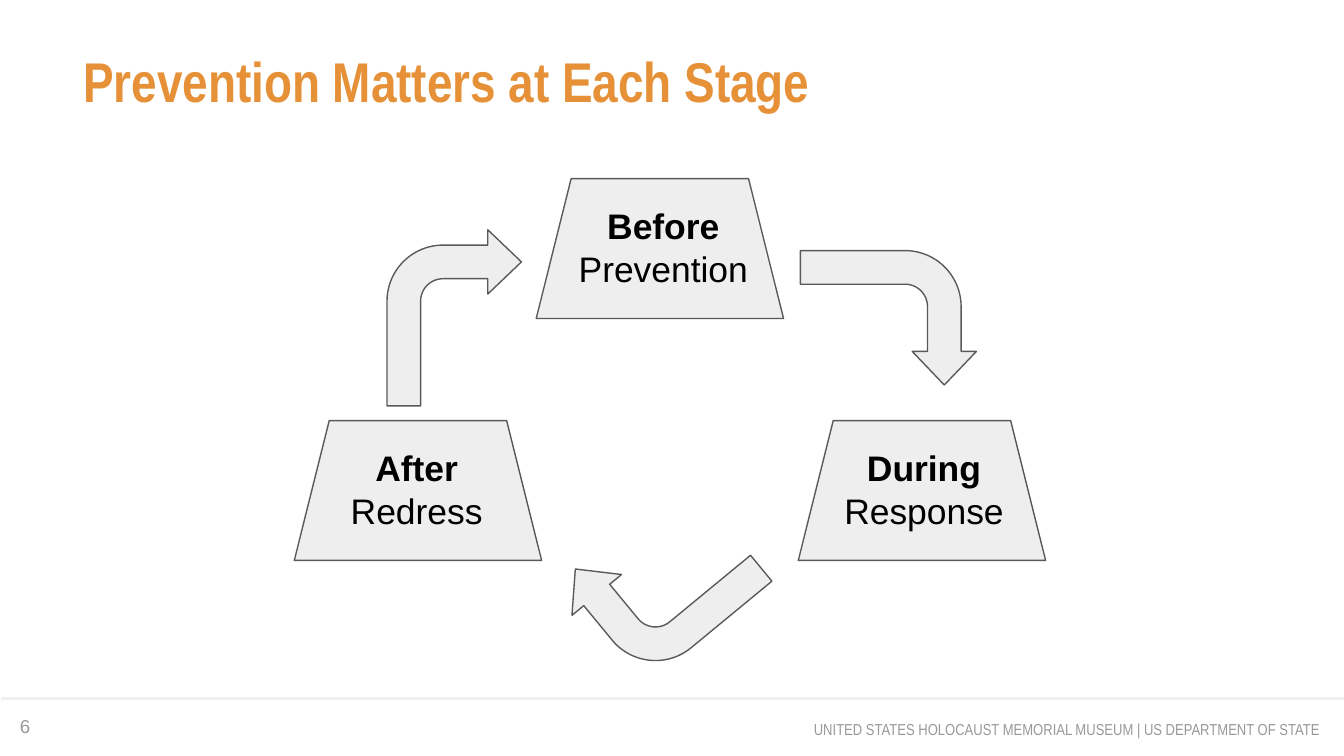
from pptx import Presentation
from pptx.dml.color import RGBColor as RGB
from pptx.enum.shapes import MSO_CONNECTOR as LINK, MSO_SHAPE as SHAPE
from pptx.enum.text import MSO_ANCHOR as ANCHOR, MSO_AUTO_SIZE as FIT, PP_ALIGN as ALIGN
from pptx.oxml.ns import qn
from pptx.util import Inches, Pt
from lxml.etree import SubElement

# Grid: square cells, 100 columns by 56.25 rows
CELL = Inches(0.1)
COLS, ROWS = 100, 56.25

ORANGE = RGB(0xE6, 0x91, 0x38)
BLACK = RGB(0, 0, 0)
GREY = RGB(0x99, 0x99, 0x99)
DARK = RGB(0x59, 0x59, 0x59)
PALE = RGB(0xEE, 0xEE, 0xEE)
RULE = RGB(0xEF, 0xEF, 0xEF)
SANS, SLIM = "Arial", "Arial Narrow"

# Stage: left, top, bold word, plain word, label offset, label width
STAGES = [
    (39.9, 13.3, "Before", "Prevention", 1.5, 15.9),
    (21.9, 31.3, "After", "Redress", 1.8, 14.6),
    (59.4, 31.3, "During", "Response", 2.3, 14.1),
]
# Arrow: left, top, turn in degrees
ARROWS = [(61.1, 17.1, 90), (28.8, 17.1, 0), (44.2, 37, 230.5)]
BEND = (0.25, 0.239, 0.25, 0.417)


def grid(*cells):
    return [round(n * CELL) for n in cells]


def add_text(slide, box, lines, size, font, color, align=ALIGN.LEFT,
             anchor=ANCHOR.TOP, pad=1, after=0, fit=FIT.NONE):
    """Add a text box; each line is a pair of words and boldness."""
    frame = slide.shapes.add_textbox(*grid(*box)).text_frame
    frame.word_wrap = True
    frame.auto_size = fit
    frame.vertical_anchor = anchor
    frame.margin_left = frame.margin_right = round(pad * CELL)
    frame.margin_top = frame.margin_bottom = round(pad * CELL)
    for i, (words, bold) in enumerate(lines):
        para = frame.paragraphs[0] if i == 0 else frame.add_paragraph()
        para.alignment = align
        para.space_after = Pt(after)
        run = para.add_run()
        run.text = words
        run.font.size = Pt(size)
        run.font.name = font
        run.font.bold = bold
        run.font.color.rgb = color


def add_form(slide, kind, box, adjust, turn=0):
    form = slide.shapes.add_shape(kind, *grid(*box))
    form.shadow.inherit = False
    form.fill.solid()
    form.fill.fore_color.rgb = PALE
    form.line.color.rgb = DARK
    form.line.width = Pt(0.75)
    form.rotation = turn
    for i, value in enumerate(adjust):
        form.adjustments[i] = value


def add_stage(slide, left, top, head, word, shift, width):
    add_form(slide, SHAPE.TRAPEZOID, (left, top, 18.4, 10.4), [0.25])
    add_text(slide, (left + shift, top + 0.9, width, 8.4),
             [(head, True), (word, False)], 19, SANS, BLACK,
             ALIGN.CENTER, fit=FIT.SHAPE_TO_FIT_TEXT)


def add_rule(slide, row):
    rule = slide.shapes.add_connector(LINK.STRAIGHT, *grid(0.1, row, COLS, row))
    rule.line.color.rgb = RULE
    rule.line.width = Pt(1.5)
    SubElement(rule._element.spPr, qn("a:effectLst"))


def main():
    deck = Presentation()
    deck.slide_width, deck.slide_height = grid(COLS, ROWS)
    slide = deck.slides.add_slide(deck.slide_layouts[6])

    # Footer
    add_rule(slide, 52)
    add_text(slide, (51.8, 52.1, 47.4, 4.3),
             [("UNITED STATES HOLOCAUST MEMORIAL MUSEUM | US DEPARTMENT OF STATE", False)],
             8.5, SLIM, GREY, ALIGN.RIGHT, ANCHOR.MIDDLE)
    add_text(slide, (0.5, 51.6, 7.8, 4.3), [("6", False)],
             10, SANS, GREY, anchor=ANCHOR.BOTTOM)

    # Title
    add_text(slide, (6.2, 3.5, 87.5, 5.4),
             [("Prevention Matters at Each Stage", True)],
             30, SLIM, ORANGE, pad=0, after=18)

    # Cycle of stages
    for stage in STAGES:
        add_stage(slide, *stage)
    for left, top, turn in ARROWS:
        add_form(slide, SHAPE.BENT_ARROW, (left, top, 10, 13.1), BEND, turn)

    deck.save("out.pptx")


if __name__ == "__main__":
    main()
